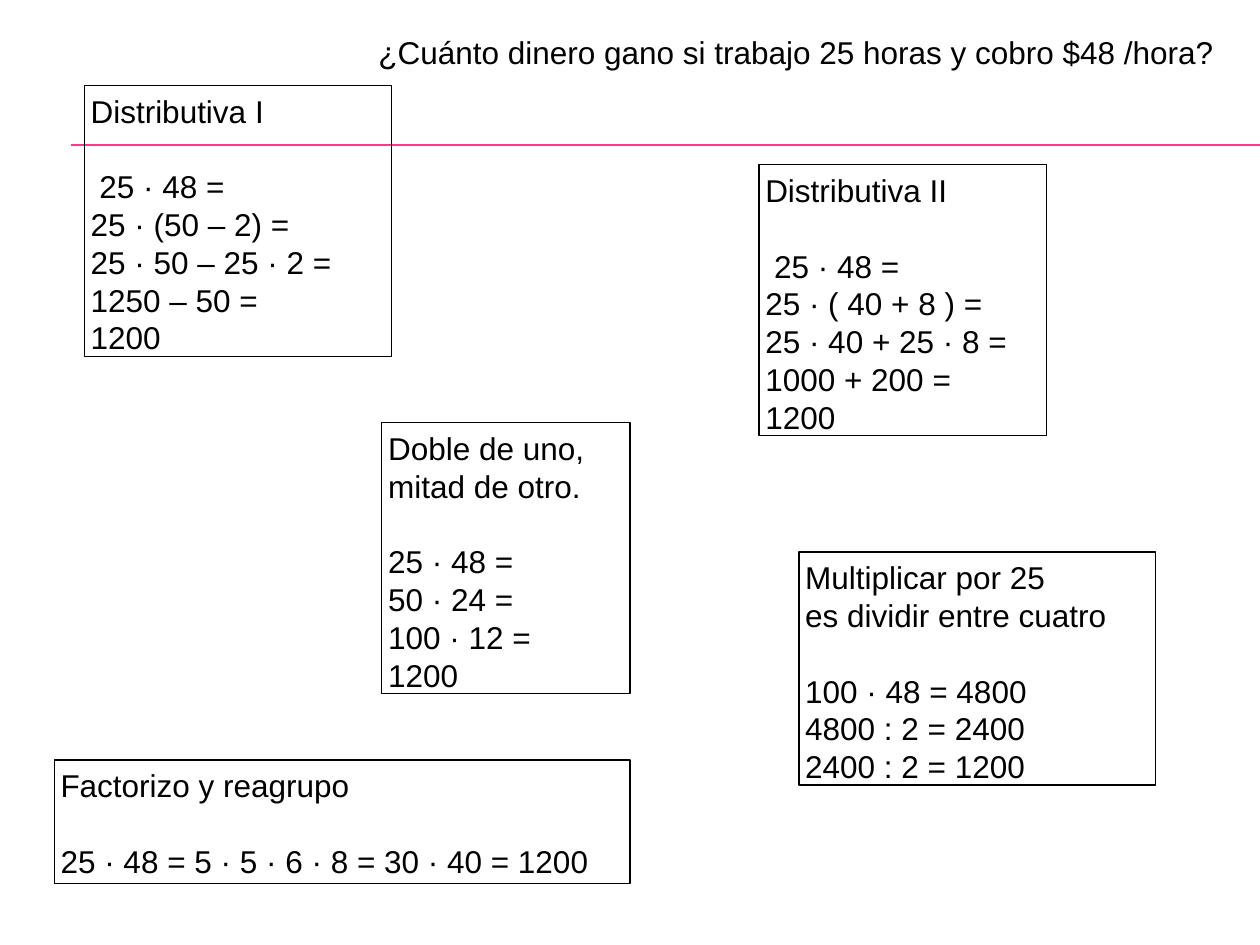
import pptx
import pptx.dml.color
import pptx.enum.shapes
import pptx.enum.text
import pptx.oxml
import pptx.util

Pt = pptx.util.Pt
BLACK, PINK = "000000", "FF388C"
BLANK_LINE = 21.6

METHODS = [
    ((218.2, 241.6, 141.8, 154.8), ["Doble de uno,", "mitad de otro."],
     ["25 · 48 =", "50 · 24 =", "100 · 12 =", "1200"]),
    ((31, 434.2, 329, 70.6), ["Factorizo y reagrupo"],
     ["25 · 48 = 5 · 5 · 6 · 8 = 30 · 40 = 1200"]),
    ((456.5, 315.4, 204, 133.2), ["Multiplicar por 25", "es dividir entre cuatro"],
     ["100 · 48 = 4800", "4800 : 2 = 2400", "2400 : 2 = 1200"]),
    ((433.7, 94.2, 164.2, 154.8), ["Distributiva II"],
     [" 25 · 48 =", "25 · ( 40 + 8 ) =", "25 · 40 + 25 · 8 =", "1000 + 200 =", "1200"]),
    ((48.2, 48.8, 175.7, 154.8), ["Distributiva I"],
     [" 25 · 48 =", "25 · (50 – 2) =", "25 · 50 – 25 · 2 =", "1250 – 50 =", "1200"]),
]


def color(value):
    """Turn a hex string into a colour."""
    return pptx.dml.color.RGBColor.from_string(value)


def set_frame(box, anchor, wrap):
    """Give a box its insets, anchor and wrapping, and return its frame."""
    frame = box.text_frame
    frame.margin_left = frame.margin_right = Pt(3.6)
    frame.margin_top = frame.margin_bottom = Pt(3.6)
    frame.vertical_anchor = anchor
    frame.word_wrap = wrap
    frame.auto_size = pptx.enum.text.MSO_AUTO_SIZE.NONE
    return frame


def write_line(para, text):
    """Write one line of black 18 point text."""
    para.alignment = pptx.enum.text.PP_ALIGN.LEFT
    span = para.add_run()
    span.text = text
    span.font.name = "Arial"
    span.font.size = Pt(18)
    span.font.color.rgb = color(BLACK)


def add_rule(page, left, top, right):
    """Draw a pink double rule from left to right."""
    for height in (top, top + 0.4):
        rule = page.shapes.add_connector(
            pptx.enum.shapes.MSO_CONNECTOR.STRAIGHT,
            Pt(left), Pt(height), Pt(right), Pt(height))
        rule.line.color.rgb = color(PINK)
        rule.line.width = Pt(0.75)
        rule._element.spPr.append(pptx.oxml.parse_xml(
            '<a:effectLst xmlns:a="http://schemas.openxmlformats.org/drawingml/2006/main"/>'))


def add_question(page, bounds, text):
    """Place the question in a text box."""
    box = page.shapes.add_textbox(*map(Pt, bounds))
    frame = set_frame(box, pptx.enum.text.MSO_ANCHOR.MIDDLE, False)
    write_line(frame.paragraphs[0], text)


def add_method(page, bounds, heading, steps):
    """Place an outlined box with a heading and its calculation below."""
    box = page.shapes.add_shape(
        pptx.enum.shapes.MSO_SHAPE.RECTANGLE, *map(Pt, bounds))
    box.shadow.inherit = False
    box.fill.background()
    box.line.color.rgb = color(BLACK)
    box.line.width = Pt(0.75)
    frame = set_frame(box, pptx.enum.text.MSO_ANCHOR.TOP, True)
    for index, text in enumerate(heading + steps):
        para = frame.add_paragraph() if index else frame.paragraphs[0]
        if index == len(heading):
            para.space_before = Pt(BLANK_LINE)
        write_line(para, text)


def main():
    """Build and save the deck."""
    deck = pptx.Presentation()
    deck.slide_width, deck.slide_height = Pt(720), Pt(540)
    page = deck.slides.add_slide(deck.slide_layouts[6])
    add_rule(page, 40.5, 82.8, 720)
    add_question(page, (212.6, 15.1, 488.9, 28.8),
                 "¿Cuánto dinero gano si trabajo 25 horas y cobro $48 /hora?")
    for bounds, heading, steps in METHODS:
        add_method(page, bounds, heading, steps)
    deck.save("out.pptx")


if __name__ == "__main__":
    main()
